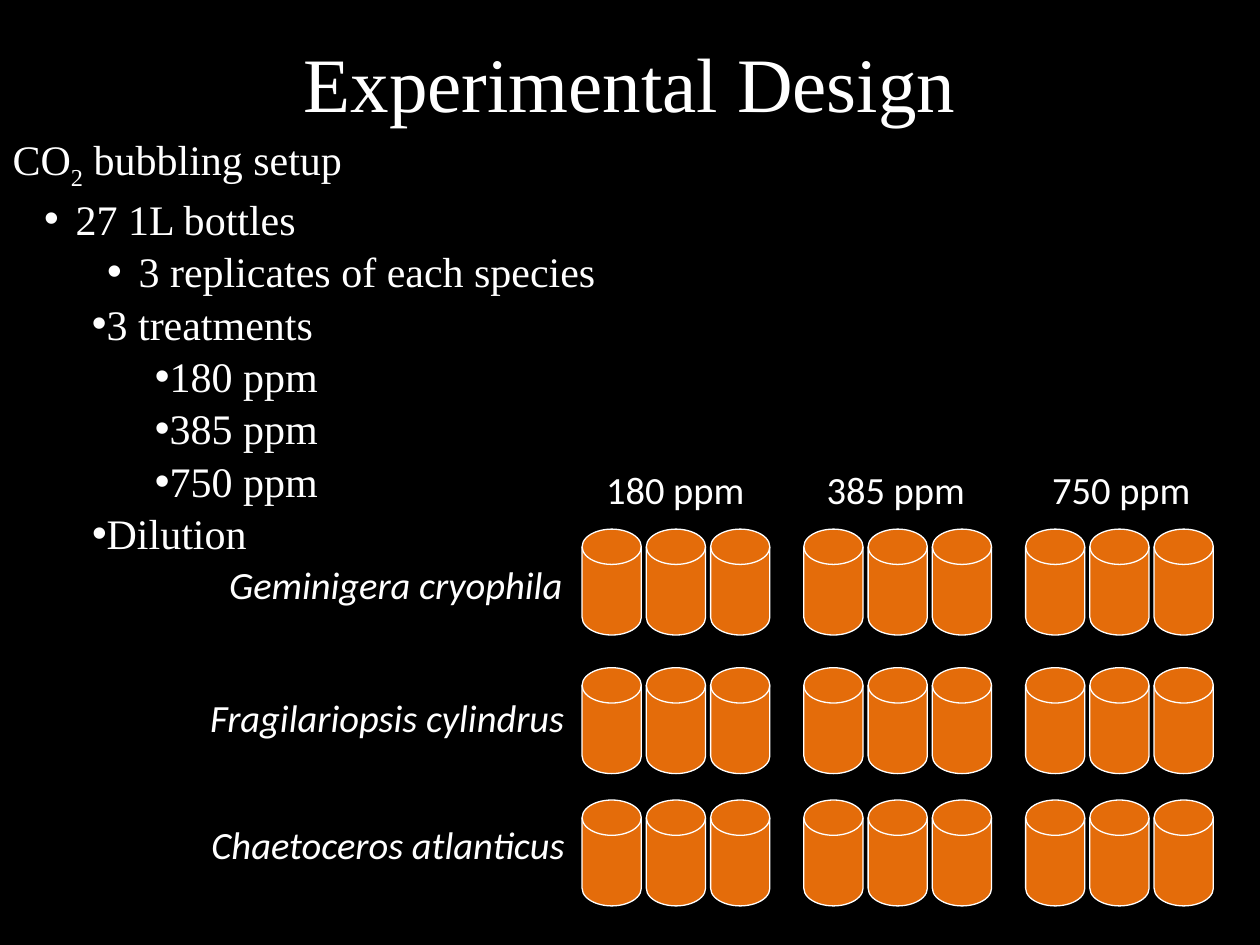
from lxml import etree
from pptx import Presentation
from pptx.dml.color import RGBColor
from pptx.enum.shapes import MSO_SHAPE as SHAPE
from pptx.enum.text import MSO_ANCHOR as ANCHOR, MSO_AUTO_SIZE as AUTO, PP_ALIGN as ALIGN
from pptx.oxml.ns import qn
from pptx.util import Inches, Pt

BLACK = RGBColor(0x00, 0x00, 0x00)
WHITE = RGBColor(0xFF, 0xFF, 0xFF)
ORANGE = RGBColor(0xE4, 0x6C, 0x0A)

# Text, level, left margin and first-line indent in inches
SETUP_STEPS = [
    ("27 1L bottles", 1, 0.5, -0.25),
    ("3 replicates of each species", 2, 1, -0.25),
    ("3 treatments", 2, 0.5, 0.13),
    ("180 ppm", 3, 1, 0.13),
    ("385 ppm", 3, 1, 0.13),
    ("750 ppm", 3, 1, 0.13),
    ("Dilution", 3, 0.44, 0.19),
]
# Text and left edge of the label
TREATMENTS = [("180 ppm", 4.48), ("385 ppm", 6.23), ("750 ppm", 8.02)]
# Text, left and top of the label, top of the bottles
SPECIES = [
    ("Geminigera cryophila", 1.72, 4.4, 4.2),
    ("Fragilariopsis cylindrus", 1.57, 5.46, 5.3),
    ("Chaetoceros atlanticus", 1.58, 6.47, 6.35),
]
REPLICATES = 3


def place(part, left, top, width, height):
    part.left, part.top = Inches(left), Inches(top)
    part.width, part.height = Inches(width), Inches(height)


def style(font, name, size):
    font.name, font.size = name, Pt(size)
    font.color.rgb = WHITE


def set_indent(paragraph, margin, first_line):
    properties = paragraph._p.get_or_add_pPr()
    properties.set("marL", str(Inches(margin)))
    properties.set("indent", str(Inches(first_line)))
    return properties


def add_heading(slide, *box):
    heading = slide.shapes.title
    place(heading, *box)
    frame = heading.text_frame
    frame.text = "Experimental Design"
    frame.vertical_anchor = ANCHOR.MIDDLE
    frame.paragraphs[0].alignment = ALIGN.CENTER
    style(frame.paragraphs[0].runs[0].font, "Times New Roman", 44)


def add_setup_list(slide, *box):
    setup = slide.placeholders[1]
    place(setup, *box)
    frame = setup.text_frame
    frame.auto_size = AUTO.NONE
    frame.margin_top = Inches(0.07)

    # Lead line with its subscript
    lead = frame.paragraphs[0]
    etree.SubElement(set_indent(lead, 0, 0), qn("a:buNone"))
    lead.space_before = Pt(0)
    for text in ("CO", "2", " bubbling setup"):
        lead.add_run().text = text
    lead.runs[1].font._element.set("baseline", "-25000")

    # Bulleted steps
    for text, level, margin, first_line in SETUP_STEPS:
        step = frame.add_paragraph()
        step.text = text
        step.level = level
        properties = set_indent(step, margin, first_line)
        etree.SubElement(properties, qn("a:buChar")).set("char", "•")
        step.space_before = Pt(1.2)

    for paragraph in frame.paragraphs:
        for run in paragraph.runs:
            style(run.font, "Times New Roman", 24)


def add_label(shapes, text, left, top, width, alignment, italic=False):
    label = shapes.add_textbox(Inches(left), Inches(top), Inches(width), Inches(0.47))
    frame = label.text_frame
    frame.word_wrap = True
    frame.text = text
    frame.paragraphs[0].alignment = alignment
    font = frame.paragraphs[0].runs[0].font
    style(font, "Calibri", 22)
    font.italic = italic


def add_bottle(shapes, left, top):
    bottle = shapes.add_shape(SHAPE.FLOWCHART_MAGNETIC_DISK, Inches(left), Inches(top),
                              Inches(0.47), Inches(0.84))
    bottle.shadow.inherit = False
    bottle.fill.solid()
    bottle.fill.fore_color.rgb = ORANGE
    bottle.line.color.rgb = WHITE
    bottle.line.width = Pt(0.75)


def add_bottle_grid(slide, left, treatment_pitch, replicate_pitch):
    shapes = slide.shapes.add_group_shape().shapes
    for treatment, label_left in TREATMENTS:
        add_label(shapes, treatment, label_left, 3.65, 1.76, ALIGN.CENTER)
    for species, label_left, label_top, bottle_top in SPECIES:
        add_label(shapes, species, label_left, label_top, 3.07, ALIGN.LEFT, italic=True)
        for column in range(len(TREATMENTS)):
            for replicate in range(REPLICATES):
                bottle_left = left + column * treatment_pitch + replicate * replicate_pitch
                add_bottle(shapes, bottle_left, bottle_top)


def main():
    deck = Presentation()
    deck.slide_width, deck.slide_height = Inches(10), Inches(7.5)
    slide = deck.slides.add_slide(deck.slide_layouts[1])
    slide.background.fill.solid()
    slide.background.fill.fore_color.rgb = BLACK
    add_heading(slide, 0.5, 0.02, 9, 1.25)
    add_setup_list(slide, 0, 0.99, 7.65, 3.64)
    add_bottle_grid(slide, 4.62, 1.76, 0.51)
    deck.save("out.pptx")


if __name__ == "__main__":
    main()
